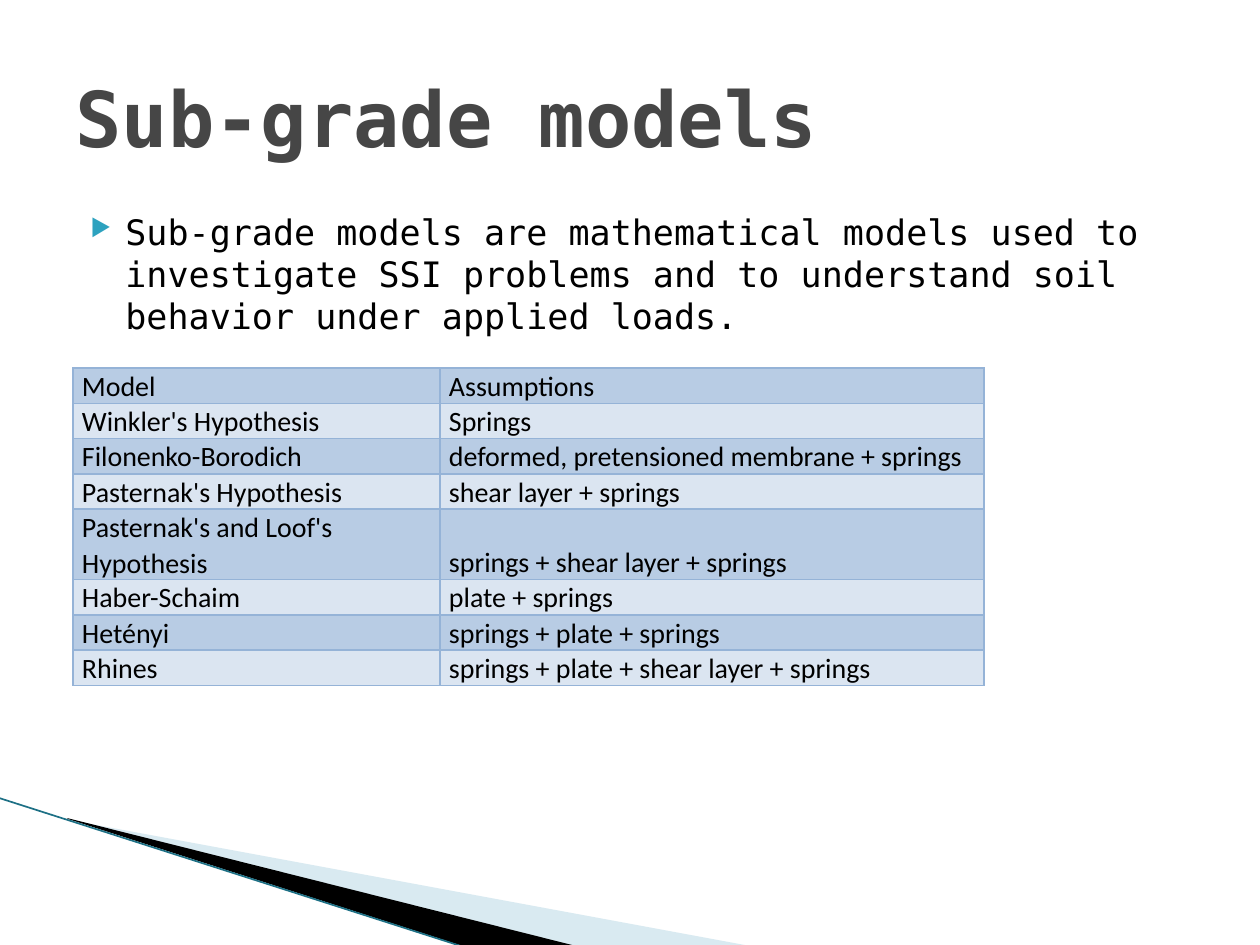
from dataclasses import dataclass
from typing import Any

from lxml import etree
from pptx import Presentation
from pptx.dml.color import RGBColor
from pptx.enum.shapes import MSO_CONNECTOR
from pptx.enum.text import MSO_ANCHOR
from pptx.oxml.ns import qn
from pptx.util import Emu, Pt

STRAIGHT = MSO_CONNECTOR.STRAIGHT
TOP, MIDDLE, BOTTOM = MSO_ANCHOR.TOP, MSO_ANCHOR.MIDDLE, MSO_ANCHOR.BOTTOM

EMU_PER_PX = 914400 / 126
MONO, SANS = "DejaVu Sans Mono", "Calibri"
COLORS = {
    "title": "464646",
    "text": "000000",
    "bullet": "2DA2BF",
    "pale_wedge": "A0CBDC",
    "dark_wedge": "000000",
    "edge": "1D7085",
    "border": "95B3D7",
    "odd_row": "B8CCE4",
    "even_row": "DBE5F1",
}


@dataclass(frozen=True)
class Box:
    left: int
    top: int
    width: int
    height: int

    def emu(self) -> tuple[Emu, ...]:
        return tuple(px(v) for v in (self.left, self.top, self.width, self.height))


@dataclass(frozen=True)
class Wedge:
    points: tuple[tuple[int, int], ...]
    color: str
    opacity: int = 100


@dataclass(frozen=True)
class SubgradeModel:
    name: str
    assumptions: str


WEDGES = (
    Wedge(((69, 820), (750, 946), (575, 946), (69, 819)), "pale_wedge", 40),
    Wedge(((67, 818), (576, 946), (469, 948), (68, 819)), "dark_wedge"),
)
MODELS = (
    SubgradeModel("Model", "Assumptions"),
    SubgradeModel("Winkler's Hypothesis", "Springs"),
    SubgradeModel("Filonenko-Borodich", "deformed, pretensioned membrane + springs"),
    SubgradeModel("Pasternak's Hypothesis", "shear layer + springs"),
    SubgradeModel("Pasternak's and Loof's Hypothesis", "springs + shear layer + springs"),
    SubgradeModel("Haber-Schaim", "plate + springs"),
    SubgradeModel("Hetényi", "springs + plate + springs"),
    SubgradeModel("Rhines", "springs + plate + shear layer + springs"),
)
COLUMN_WIDTHS = (367, 544)
ROW_HEIGHT = 30
CELL_PADDING = 9


def px(length: int) -> Emu:
    return Emu(round(length * EMU_PER_PX))


def rgb(name: str) -> RGBColor:
    return RGBColor.from_string(COLORS[name])


def add_child(parent: Any, tag: str, **attributes: str) -> Any:
    return etree.SubElement(parent, qn(tag), attributes)


def write_text(frame: Any, text: str, *, size: int, font: str = SANS,
               color: str = "text", bold: bool = False,
               spacing: float = 1.0, bulleted: bool = False) -> None:
    frame.word_wrap = True
    paragraph = frame.paragraphs[0]
    paragraph.line_spacing = spacing
    if bulleted:
        properties = paragraph._p.get_or_add_pPr()
        properties.set("marL", str(px(50)))
        properties.set("indent", str(-px(35)))
        bullet_color = add_child(properties, "a:buClr")
        add_child(bullet_color, "a:srgbClr", val=COLORS["bullet"])
        add_child(properties, "a:buSzPct", val="68000")
        add_child(properties, "a:buChar", char="▶")
    run = paragraph.add_run()
    run.text = text
    run.font.name = font
    run.font.size = Pt(size)
    run.font.bold = bold
    run.font.color.rgb = rgb(color)


def add_text(slide: Any, box: Box, text: str, *, anchor: Any = TOP,
             **text_format: Any) -> None:
    frame = slide.shapes.add_textbox(*box.emu()).text_frame
    frame.vertical_anchor = anchor
    write_text(frame, text, **text_format)


def draw_wedge(slide: Any, wedge: Wedge) -> None:
    start, *rest = wedge.points
    builder = slide.shapes.build_freeform(*start, scale=EMU_PER_PX)
    builder.add_line_segments(rest, close=True)
    corner = builder.convert_to_shape()
    corner.shadow.inherit = False
    corner.line.fill.background()
    corner.fill.solid()
    corner.fill.fore_color.rgb = rgb(wedge.color)
    if wedge.opacity < 100:
        color = corner._element.spPr.find(qn("a:solidFill"))[0]
        add_child(color, "a:alpha", val=str(wedge.opacity * 1000))


def draw_edge(slide: Any, start: tuple[int, int], end: tuple[int, int]) -> None:
    ends = [px(v) for v in (*start, *end)]
    edge = slide.shapes.add_connector(STRAIGHT, *ends)
    edge.line.color.rgb = rgb("edge")
    edge.line.width = Pt(0.95)
    add_child(edge._element.spPr, "a:effectLst")


def add_borders(cell: Any) -> None:
    properties = cell._tc.get_or_add_tcPr()
    for side in ("a:lnL", "a:lnR", "a:lnT", "a:lnB"):
        border = add_child(properties, side, w=str(Pt(1)))
        add_child(add_child(border, "a:solidFill"), "a:srgbClr", val=COLORS["border"])


def draw_models(slide: Any, left: int, top: int) -> None:
    box = Box(left, top, sum(COLUMN_WIDTHS), ROW_HEIGHT * len(MODELS))
    table = slide.shapes.add_table(len(MODELS), len(COLUMN_WIDTHS), *box.emu()).table
    for column, width in zip(table.columns, COLUMN_WIDTHS):
        column.width = px(width)
    for index, (row, model) in enumerate(zip(table.rows, MODELS)):
        row.height = px(ROW_HEIGHT)
        for cell, text in zip(row.cells, (model.name, model.assumptions)):
            cell.margin_left = cell.margin_right = px(CELL_PADDING)
            cell.margin_top = cell.margin_bottom = 0
            cell.vertical_anchor = BOTTOM
            add_borders(cell)
            cell.fill.solid()
            cell.fill.fore_color.rgb = rgb("even_row" if index % 2 else "odd_row")
            write_text(cell.text_frame, text, size=16, spacing=1.05)


def main() -> None:
    deck = Presentation()
    deck.slide_width, deck.slide_height = px(1260), px(945)
    slide = deck.slides.add_slide(deck.slide_layouts[6])
    for wedge in WEDGES:
        draw_wedge(slide, wedge)
    draw_edge(slide, (-1, 798), (467, 948))
    add_text(slide, Box(63, 204, 1134, 624),
             "Sub-grade models are mathematical models used to investigate SSI "
             "problems and to understand soil behavior under applied loads.",
             size=20, font=MONO, bulleted=True)
    add_text(slide, Box(63, 38, 1134, 158), "Sub-grade models", anchor=MIDDLE,
             size=44, font=MONO, color="title", bold=True)
    draw_models(slide, 73, 368)
    deck.save("out.pptx")


if __name__ == "__main__":
    main()
